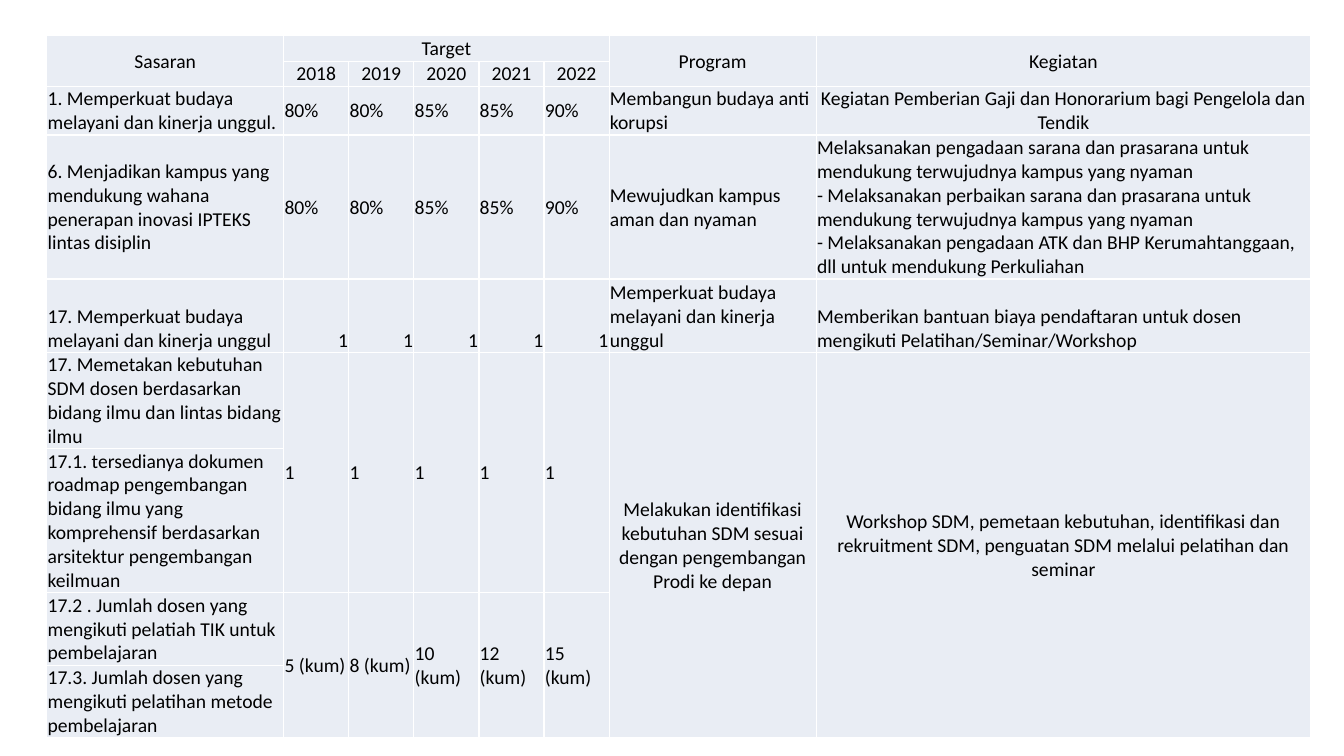
"""Build a slide with the table of goals, yearly targets, programmes and activities."""
from dataclasses import dataclass

from lxml.etree import SubElement
from pptx import Presentation
from pptx.dml.color import RGBColor
from pptx.enum.text import MSO_ANCHOR as Anchor, PP_ALIGN as Align
from pptx.oxml.ns import qn
from pptx.table import Table, _Cell as Cell
from pptx.util import Cm, Pt

COLOURS = {"text": "000000", "cell": "E9EDF4", "border": "FFFFFF"}
COLUMN_WIDTHS = [5.97] + [1.64] * 5 + [5.22, 12.46]
ROW_HEIGHTS = [0.64, 0.64, 1.14, 3.38, 1.85, 1.83, 3.1, 1.83, 1.83]
PROGRAM, KEGIATAN = 6, 7


@dataclass(frozen=True)
class Entry:
    row: int
    column: int
    text: str
    align: Align = Align.LEFT
    anchor: Anchor = Anchor.MIDDLE
    rows: int = 1
    columns: int = 1


@dataclass(frozen=True)
class YearRow:
    row: int
    values: list[str]
    align: Align = Align.LEFT
    anchor: Anchor = Anchor.MIDDLE
    rows: int = 1

    def entries(self) -> list[Entry]:
        return [Entry(self.row, column, value, self.align, self.anchor, self.rows)
                for column, value in enumerate(self.values, 1)]


YEAR_ROWS = [
    YearRow(1, ["2018", "2019", "2020", "2021", "2022"], Align.CENTER),
    YearRow(2, ["80%", "80%", "85%", "85%", "90%"]),
    YearRow(3, ["80%", "80%", "85%", "85%", "90%"]),
    YearRow(4, ["1"] * 5, Align.RIGHT, Anchor.BOTTOM),
    YearRow(5, ["1"] * 5, rows=2),
    YearRow(7, [f"{credit} (kum)" for credit in (5, 8, 10, 12, 15)], rows=2),
]

ENTRIES = [
    Entry(0, 0, "Sasaran", Align.CENTER, rows=2),
    Entry(0, 1, "Target", Align.CENTER, Anchor.BOTTOM, columns=5),
    Entry(0, PROGRAM, "Program", Align.CENTER, rows=2),
    Entry(0, KEGIATAN, "Kegiatan", Align.CENTER, rows=2),
    Entry(2, 0, "1. Memperkuat budaya melayani dan kinerja unggul."),
    Entry(2, PROGRAM, "Membangun budaya anti korupsi"),
    Entry(2, KEGIATAN, "Kegiatan Pemberian Gaji dan Honorarium bagi Pengelola dan Tendik",
          Align.CENTER),
    Entry(3, 0, "6. Menjadikan kampus yang mendukung wahana penerapan inovasi IPTEKS "
                "lintas disiplin"),
    Entry(3, PROGRAM, "Mewujudkan kampus aman dan nyaman"),
    Entry(3, KEGIATAN,
          "Melaksanakan pengadaan sarana dan prasarana untuk mendukung terwujudnya "
          "kampus yang nyaman\v"
          "- Melaksanakan perbaikan sarana dan prasarana untuk mendukung terwujudnya "
          "kampus yang nyaman\v"
          "- Melaksanakan pengadaan ATK dan BHP Kerumahtanggaan, dll untuk mendukung "
          "Perkuliahan", anchor=Anchor.BOTTOM),
    Entry(4, 0, "17. Memperkuat budaya melayani dan kinerja unggul", anchor=Anchor.BOTTOM),
    Entry(4, PROGRAM, "Memperkuat budaya melayani dan kinerja unggul", anchor=Anchor.BOTTOM),
    Entry(4, KEGIATAN, "Memberikan bantuan biaya pendaftaran untuk dosen mengikuti "
                       "Pelatihan/Seminar/Workshop", anchor=Anchor.BOTTOM),
    Entry(5, 0, "17. Memetakan kebutuhan SDM dosen berdasarkan bidang ilmu dan lintas "
                "bidang ilmu"),
    Entry(5, PROGRAM, "Melakukan identifikasi kebutuhan SDM sesuai dengan pengembangan "
                      "Prodi ke depan", Align.CENTER, rows=4),
    Entry(5, KEGIATAN, "Workshop SDM, pemetaan kebutuhan, identifikasi dan rekruitment SDM, "
                       "penguatan SDM melalui pelatihan dan seminar", Align.CENTER, rows=4),
    Entry(6, 0, "17.1. tersedianya dokumen roadmap pengembangan bidang ilmu yang "
                "komprehensif berdasarkan arsitektur pengembangan keilmuan"),
    Entry(7, 0, "17.2 . Jumlah dosen yang mengikuti pelatiah TIK untuk pembelajaran"),
    Entry(8, 0, "17.3. Jumlah dosen yang mengikuti pelatihan metode pembelajaran"),
] + [entry for year_row in YEAR_ROWS for entry in year_row.entries()]


def style_cell(cell: Cell) -> None:
    cell.margin_left = cell.margin_top = cell.margin_right = Cm(0.02)
    cell.margin_bottom = Cm(0)
    properties = cell._tc.get_or_add_tcPr()
    for side in ("a:lnL", "a:lnR", "a:lnT", "a:lnB"):
        border = SubElement(properties, qn(side), w=str(Pt(1)))
        border_fill = SubElement(border, qn("a:solidFill"))
        SubElement(border_fill, qn("a:srgbClr"), val=COLOURS["border"])
    cell.fill.solid()
    cell.fill.fore_color.rgb = RGBColor.from_string(COLOURS["cell"])


def write_entry(table: Table, entry: Entry) -> None:
    cell = table.cell(entry.row, entry.column)
    if entry.rows > 1 or entry.columns > 1:
        cell.merge(table.cell(entry.row + entry.rows - 1, entry.column + entry.columns - 1))
    cell.vertical_anchor = entry.anchor
    cell.text_frame.text = entry.text
    paragraph = cell.text_frame.paragraphs[0]
    paragraph.alignment = entry.align
    paragraph.font.name = "Calibri"
    paragraph.font.size = Pt(14)
    paragraph.font.color.rgb = RGBColor.from_string(COLOURS["text"])


def main() -> None:
    presentation = Presentation()
    presentation.slide_width, presentation.slide_height = Cm(33.87), Cm(19.05)
    slide = presentation.slides.add_slide(presentation.slide_layouts[6])
    targets = slide.shapes.add_table(
        len(ROW_HEIGHTS), len(COLUMN_WIDTHS), Cm(1.18), Cm(0.9),
        Cm(sum(COLUMN_WIDTHS)), Cm(sum(ROW_HEIGHTS))).table
    targets.first_row = targets.horz_banding = False
    for column, width in zip(targets.columns, COLUMN_WIDTHS):
        column.width = Cm(width)
    for row, height in zip(targets.rows, ROW_HEIGHTS):
        row.height = Cm(height)
    for cell in targets.iter_cells():
        style_cell(cell)
    for entry in ENTRIES:
        write_entry(targets, entry)
    presentation.save("out.pptx")


if __name__ == "__main__":
    main()
